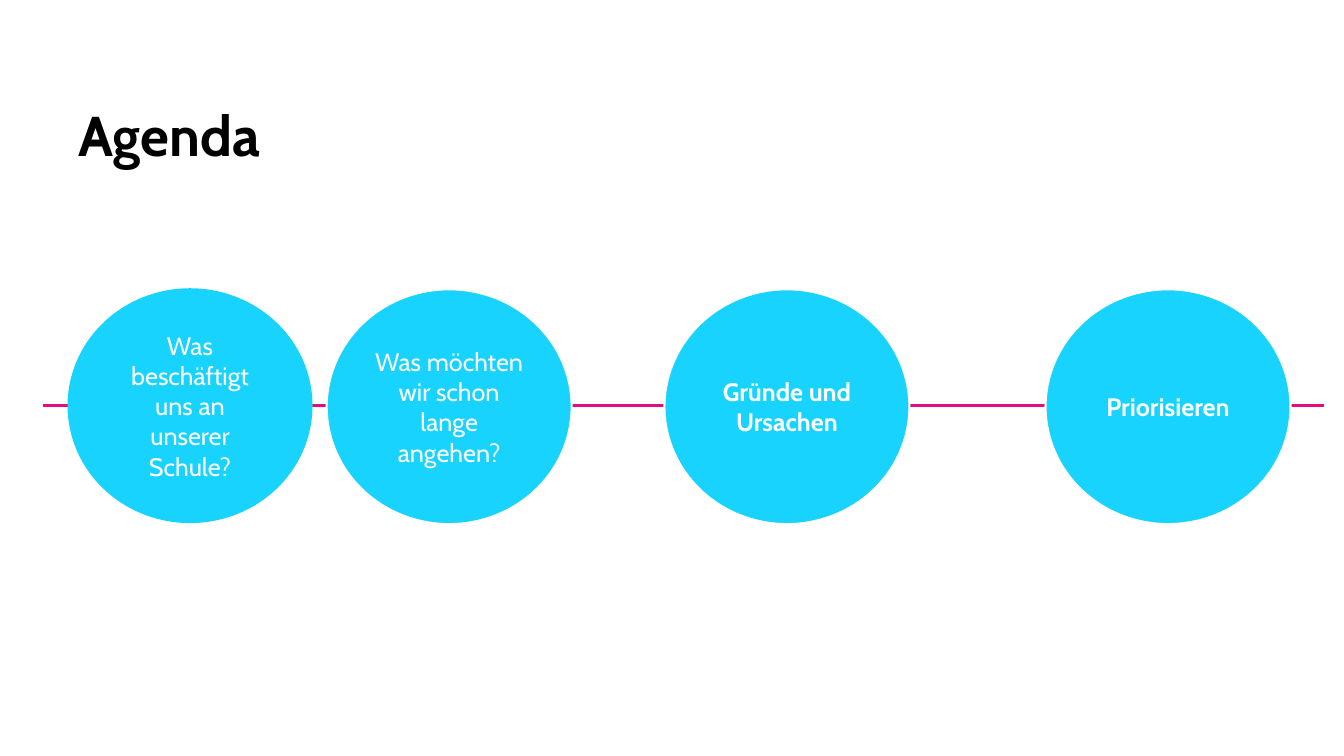
from dataclasses import dataclass

from lxml import etree
from pptx import Presentation
from pptx import util as u
from pptx.dml.color import RGBColor
from pptx.enum import shapes, text
from pptx.oxml.ns import qn
from pptx.slide import Slide
from pptx.text.text import TextFrame

FONT = "Cabin"
BLACK, WHITE, CYAN, MAGENTA = "000000", "FFFFFF", "19D3FF", "E50D7E"
CIRCLE_WIDTH, CIRCLE_HEIGHT = 2.43, 2.33


@dataclass
class Topic:
    label: str
    left: float
    top: float = 2.87
    bold: bool = False
    outlined: bool = True


TOPICS = [
    Topic("Was\nbeschäftigt uns an unserer Schule?", 0.67, top=2.86, outlined=False),
    Topic("Was möchten wir schon lange angehen?", 3.24),
    Topic("Gründe und Ursachen", 6.59, bold=True),
    Topic("Priorisieren", 10.37, bold=True),
]


def color(value: str) -> RGBColor:
    return RGBColor.from_string(value)


def write(frame: TextFrame, content: str, size: float, ink: str, bold: bool,
          align: text.PP_ALIGN) -> None:
    frame.word_wrap = True
    frame.text = content
    for para in frame.paragraphs:
        para.alignment = align
        for span in para.runs:
            span.font.name = FONT
            span.font.size = u.Pt(size)
            span.font.bold = bold
            span.font.color.rgb = color(ink)


def add_title(page: Slide) -> None:
    box = page.shapes.add_textbox(u.Inches(0.68), u.Inches(1.02), u.Inches(12.2), u.Inches(1.83))
    write(box.text_frame, "Agenda", 40, BLACK, True, text.PP_ALIGN.LEFT)
    box.text_frame.paragraphs[0].line_spacing = 0.9


def add_timeline(page: Slide) -> None:
    y = u.Inches(4.02)
    line = page.shapes.add_connector(
        shapes.MSO_CONNECTOR.STRAIGHT, u.Inches(0.43), y, u.Inches(13.13), y)
    line.line.color.rgb = color(MAGENTA)
    line.line.width = u.Pt(2.25)
    etree.SubElement(line._element.spPr, qn("a:effectLst"))


def add_topic(page: Slide, topic: Topic) -> None:
    circle = page.shapes.add_shape(
        shapes.MSO_SHAPE.OVAL, u.Inches(topic.left), u.Inches(topic.top),
        u.Inches(CIRCLE_WIDTH), u.Inches(CIRCLE_HEIGHT))
    circle.shadow.inherit = False
    circle.fill.solid()
    circle.fill.fore_color.rgb = color(CYAN)
    if topic.outlined:
        circle.line.color.rgb = color(WHITE)
        circle.line.width = u.Pt(1.5)
    else:
        circle.line.fill.background()
    circle.text_frame.vertical_anchor = text.MSO_ANCHOR.MIDDLE
    write(circle.text_frame, topic.label, 18, WHITE, topic.bold, text.PP_ALIGN.CENTER)


def main() -> None:
    deck = Presentation()
    deck.slide_width, deck.slide_height = u.Inches(13.33), u.Inches(7.5)
    page = deck.slides.add_slide(deck.slide_layouts[6])
    add_title(page)
    add_timeline(page)
    for topic in TOPICS:
        add_topic(page, topic)
    deck.save("out.pptx")


if __name__ == "__main__":
    main()
